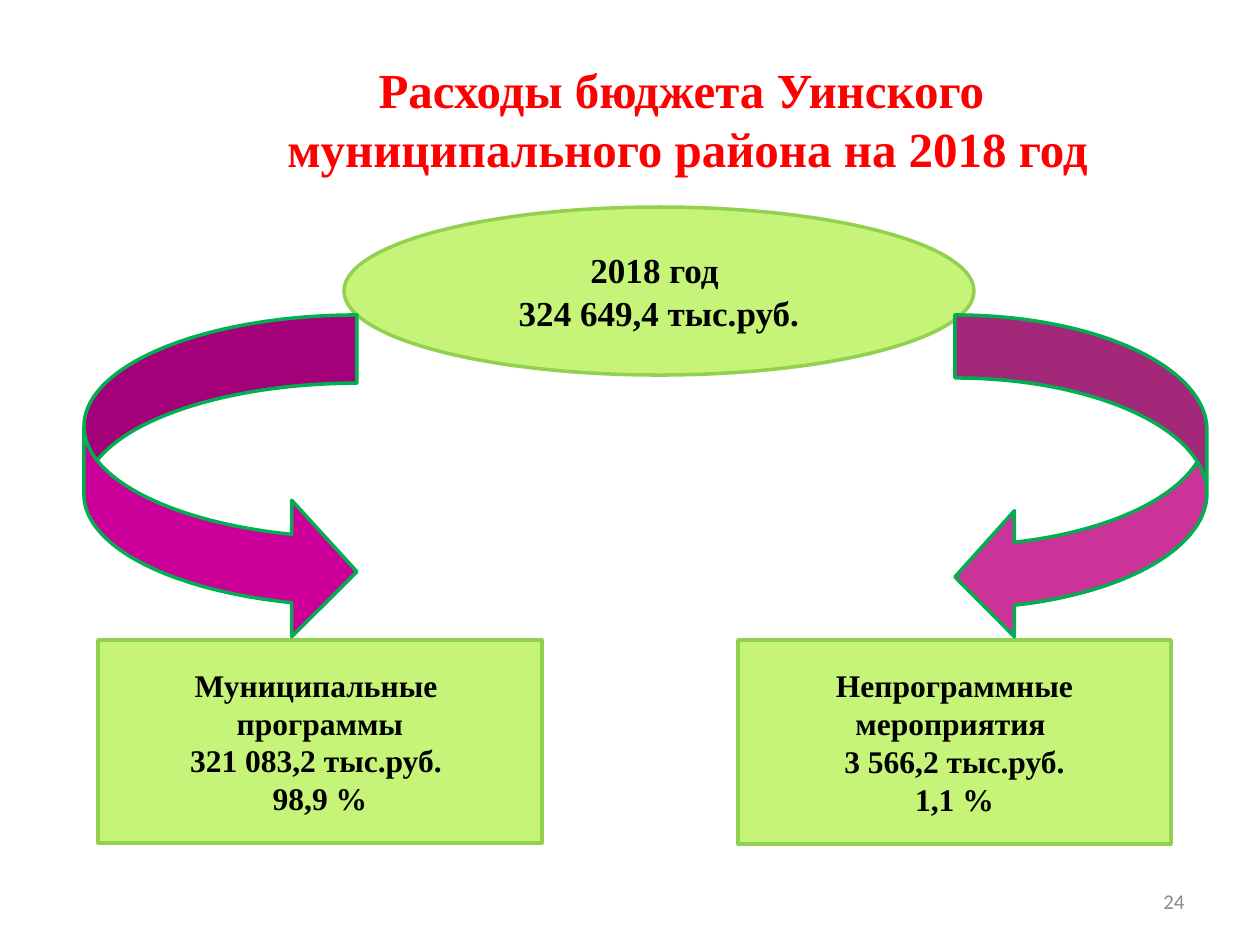
from pptx import Presentation
from pptx.dml.color import RGBColor
from pptx.enum.shapes import MSO_SHAPE
from pptx.enum.text import MSO_ANCHOR, PP_ALIGN
from pptx.util import Emu, Pt

# Content
TITLE = "Расходы бюджета Уинского \vмуниципального района на 2018 год"
PAGE = "24"
SERIF = "Times New Roman"
GREEN = dict(fill="C5F478", line="92D050")

# Shape, place in px, lines of text, text size
BLOCKS = [
    (MSO_SHAPE.OVAL, (344, 207, 630, 168),
     ["2018 год ", "324 649,4 тыс.руб."], 20),
    (MSO_SHAPE.RECTANGLE, (98, 640, 444, 203),
     ["Муниципальные ", "программы", "321 083,2 тыс.руб. ", "98,9 %"], 18),
    (MSO_SHAPE.RECTANGLE, (738, 640, 433, 204),
     ["Непрограммные мероприятия ", "3 566,2 тыс.руб.", "1,1 %"], 18),
]
# Shape, place in px, fill, arrowhead length
ARROWS = [
    (MSO_SHAPE.CURVED_RIGHT_ARROW, (84, 315, 273, 325), "CC0099", 0.239),
    (MSO_SHAPE.CURVED_LEFT_ARROW, (955, 315, 252, 325), "CC3399", 0.236),
]


def px(n):
    return Emu(round(n * 914400 / 126))


def color(value):
    return RGBColor.from_string(value)


def write(tf, lines, size, font=SERIF, ink="000000", bold=True,
          align=PP_ALIGN.CENTER):
    tf.word_wrap = True
    tf.vertical_anchor = MSO_ANCHOR.MIDDLE
    for i, line in enumerate(lines):
        p = tf.paragraphs[0] if i == 0 else tf.add_paragraph()
        p.text = line
        p.alignment = align
        for r in p.runs:
            r.font.name, r.font.size, r.font.bold = font, Pt(size), bold
            r.font.color.rgb = color(ink)


def add_shape(s, kind, box, fill, line):
    sp = s.shapes.add_shape(kind, *map(px, box))
    sp.shadow.inherit = False
    sp.fill.solid()
    sp.fill.fore_color.rgb = color(fill)
    sp.line.color.rgb = color(line)
    sp.line.width = Pt(2)
    return sp


def main():
    prs = Presentation()
    prs.slide_width, prs.slide_height = px(1260), px(945)
    s = prs.slides.add_slide(prs.slide_layouts[5])

    # Title
    title = s.shapes.title
    title.left, title.top, title.width, title.height = map(
        px, (178, 29, 1019, 178))
    write(title.text_frame, [TITLE], 28, ink="FF0000")

    # Page number
    number = s.shapes.add_textbox(*map(px, (903, 876, 294, 50)))
    write(number.text_frame, [PAGE], 12, font="Calibri", ink="8C8C8C",
          bold=False, align=PP_ALIGN.RIGHT)

    # Total and its two parts
    for kind, box, lines, size in BLOCKS:
        sp = add_shape(s, kind, box, **GREEN)
        write(sp.text_frame, lines, size)

    # Arrows from the total to the parts
    for kind, box, fill, head in ARROWS:
        sp = add_shape(s, kind, box, fill, "00B050")
        for i, value in enumerate((0.25, 0.5, head)):
            sp.adjustments[i] = value

    prs.save("out.pptx")


if __name__ == "__main__":
    main()
